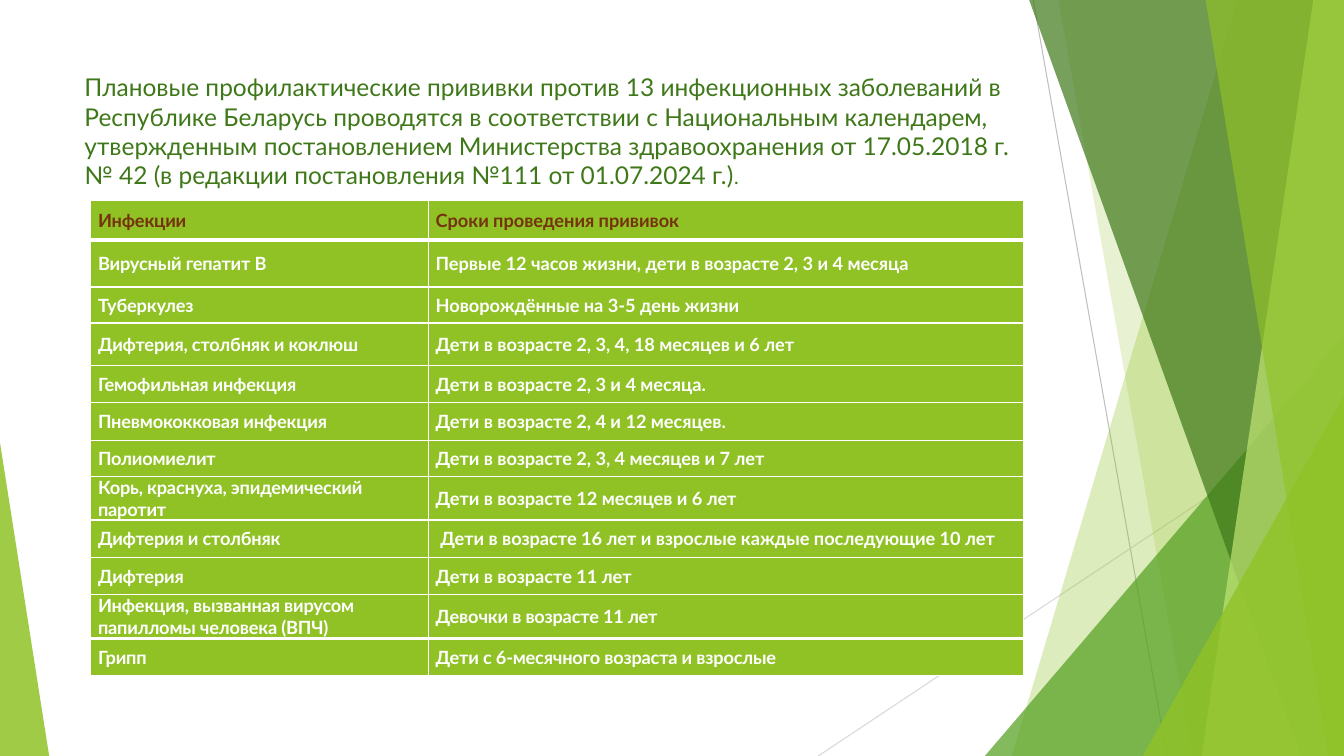
from dataclasses import dataclass

import lxml.etree
import pptx
import pptx.dml.color
import pptx.enum.shapes
import pptx.enum.text
import pptx.oxml.ns
import pptx.util

Cm = pptx.util.Cm
Pt = pptx.util.Pt
qn = pptx.oxml.ns.qn

COLORS = {
    "lime": "90C226",
    "pale": "C0E474",
    "leaf": "54A021",
    "forest": "3F7819",
    "brown": "74330C",
    "white": "FFFFFF",
    "gray": "BFBFBF",
    "light_gray": "D9D9D9",
}
FONT = "Lato"
WIDTH, HEIGHT, TOP = 33.87, 19.05, -0.02


@dataclass
class Ray:
    start: tuple[float, float]
    end: tuple[float, float]
    color: str


@dataclass
class Band:
    top_x: float
    bottom_x: float
    color: str
    opacity: int


@dataclass
class Wedge:
    left: float
    top: float
    width: float
    apex: float
    color: str
    opacity: int


@dataclass
class Vaccination:
    infection: str
    schedule: str
    height: float
    schedule_spacing: int = 0
    tab_stop: float = 0


RAYS = [
    Ray((26.04, 0), (29.41, HEIGHT), "gray"),
    Ray((WIDTH, 10.24), (20.62, HEIGHT), "light_gray"),
]
FACETS = [
    Band(31.19, 25.5, "lime", 30),
    Band(26.67, 30.05, "lime", 20),
    Wedge(24.82, 8.46, 9.05, 1, "leaf", 72),
    Band(25.93, 32.79, "forest", 70),
    Band(33.1, 30.28, "pale", 70),
    Band(30.38, 33.48, "lime", 65),
    Wedge(28.8, 9.98, 5.07, 1, "lime", 80),
    Wedge(0, 11.15, 1.24, 0, "lime", 85),
]
TITLE_LINES = [
    "Плановые профилактические прививки против 13 инфекционных заболеваний в "
    "Республике Беларусь проводятся в соответствии с Национальным календарем, "
    "утвержденным постановлением Министерства здравоохранения от 17.05.2018 г.",
    "№ 42 (в редакции постановления №111 от 01.07.2024 г.)",
]
CALENDAR = [
    Vaccination("Инфекции", "Сроки проведения прививок", 0.99),
    Vaccination("Вирусный гепатит В", "Первые 12 часов жизни, дети в возрасте 2, 3 и 4 месяца", 1.19),
    Vaccination("Туберкулез", "Новорождённые на 3-5 день жизни", 0.91),
    Vaccination("Дифтерия, столбняк и коклюш", "Дети в возрасте 2, 3, 4, 18 месяцев и 6 лет", 1.07),
    Vaccination("Гемофильная инфекция", "Дети в возрасте 2, 3 и 4 месяца.", 0.94),
    Vaccination("Пневмококковая инфекция", "Дети в возрасте 2, 4 и 12 месяцев.", 0.94),
    Vaccination("Полиомиелит", "Дети в возрасте 2, 3, 4 месяцев и 7 лет", 0.91),
    Vaccination("Корь, краснуха, эпидемический паротит", "Дети в возрасте 12 месяцев и 6 лет", 0.97),
    Vaccination("Дифтерия и столбняк", "Дети в возрасте 16 лет и взрослые каждые последующие\t10 лет", 0.94,
                tab_stop=13.94),
    Vaccination("Дифтерия", "Дети в возрасте 11 лет", 0.94),
    Vaccination("Инфекция, вызванная вирусом папилломы человека (ВПЧ)", "Девочки в возрасте 11 лет", 0.97, -10),
    Vaccination("Грипп", "Дети с 6-месячного возраста и взрослые", 0.94, -10),
]
COLUMN_WIDTHS = [8.51, 14.99]


def rgb(color: str) -> pptx.dml.color.RGBColor:
    return pptx.dml.color.RGBColor.from_string(COLORS[color])


def draw_ray(slide, ray: Ray) -> None:
    line = slide.shapes.add_connector(
        pptx.enum.shapes.MSO_CONNECTOR.STRAIGHT, *map(Cm, ray.start + ray.end))
    line.line.color.rgb = rgb(ray.color)
    line.line.width = Pt(0.75)
    lxml.etree.SubElement(line._element.spPr, qn("a:effectLst"))


def draw_facet(slide, facet: Band | Wedge) -> None:
    if isinstance(facet, Band):
        outline = slide.shapes.build_freeform(Cm(facet.top_x), Cm(TOP))
        corners = [(WIDTH, TOP), (WIDTH, HEIGHT), (facet.bottom_x, HEIGHT)]
        outline.add_line_segments([(Cm(x), Cm(y)) for x, y in corners])
        piece = outline.convert_to_shape()
    else:
        piece = slide.shapes.add_shape(
            pptx.enum.shapes.MSO_SHAPE.ISOSCELES_TRIANGLE,
            Cm(facet.left), Cm(facet.top), Cm(facet.width), Cm(HEIGHT - facet.top))
        piece.adjustments[0] = facet.apex
    piece.shadow.inherit = False
    piece.line.fill.background()
    piece.fill.solid()
    piece.fill.fore_color.rgb = rgb(facet.color)
    tint = piece._element.spPr.find(qn("a:solidFill"))[0]
    lxml.etree.SubElement(tint, qn("a:alpha"), val=str(facet.opacity * 1000))


def add_text(paragraph, text: str, size: float, color: str, bold: bool = False, spacing: int = 0) -> None:
    run = paragraph.add_run()
    run.text = text
    run.font.name = FONT
    run.font.size = Pt(size)
    run.font.bold = bold
    run.font.color.rgb = rgb(color)
    if spacing:
        run._r.get_or_add_rPr().set("spc", str(spacing))


def draw_title(slide) -> None:
    frame = slide.shapes.add_textbox(Cm(1.88), Cm(1.7), Cm(24.31), Cm(2.9)).text_frame
    frame.word_wrap = True
    paragraph = frame.paragraphs[0]
    add_text(paragraph, TITLE_LINES[0], 17.5, "forest")
    paragraph.add_line_break()
    add_text(paragraph, TITLE_LINES[1], 17.5, "forest")
    add_text(paragraph, ".", 14, "forest")


def style_cell(cell, top_border: int, bottom_border: int) -> None:
    cell.margin_left = cell.margin_right = Cm(0.18)
    cell.margin_top = cell.margin_bottom = 0
    cell.vertical_anchor = pptx.enum.text.MSO_ANCHOR.MIDDLE
    properties = cell._tc.get_or_add_tcPr()
    for side, width in (("L", 1), ("R", 1), ("T", top_border), ("B", bottom_border)):
        border = lxml.etree.SubElement(properties, qn(f"a:ln{side}"), w=str(Pt(width)))
        fill = lxml.etree.SubElement(border, qn("a:solidFill"))
        lxml.etree.SubElement(fill, qn("a:srgbClr"), val=COLORS["white"])
    cell.fill.solid()
    cell.fill.fore_color.rgb = rgb("lime")


def set_tab_stop(paragraph, position: float) -> None:
    properties = paragraph._p.get_or_add_pPr()
    properties.set("marL", "0")
    properties.set("indent", str(Cm(0.12)))
    stops = lxml.etree.SubElement(properties, qn("a:tabLst"))
    lxml.etree.SubElement(stops, qn("a:tab"), pos=str(Cm(position)), algn="l")


def draw_calendar(slide) -> None:
    last = len(CALENDAR) - 1
    table = slide.shapes.add_table(
        len(CALENDAR), len(COLUMN_WIDTHS), Cm(2.29), Cm(5.05), Cm(sum(COLUMN_WIDTHS)),
        Cm(sum(entry.height for entry in CALENDAR))).table
    table.first_row = table.horz_banding = False
    for column, width in zip(table.columns, COLUMN_WIDTHS):
        column.width = Cm(width)
    for index, entry in enumerate(CALENDAR):
        table.rows[index].height = Cm(entry.height)
        color = "white" if index else "brown"
        texts = [(entry.infection, -10), (entry.schedule, entry.schedule_spacing)]
        for column, (text, spacing) in enumerate(texts):
            cell = table.cell(index, column)
            style_cell(cell, 3 if index in (1, last) else 1, 3 if index in (0, last - 1) else 1)
            add_text(cell.text_frame.paragraphs[0], text, 13, color, True, spacing)
        if entry.tab_stop:
            set_tab_stop(table.cell(index, 1).text_frame.paragraphs[0], entry.tab_stop)


def main() -> None:
    presentation = pptx.Presentation()
    presentation.slide_width = Cm(WIDTH)
    presentation.slide_height = Cm(HEIGHT)
    slide = presentation.slides.add_slide(presentation.slide_layouts[6])
    for ray in RAYS:
        draw_ray(slide, ray)
    for facet in FACETS:
        draw_facet(slide, facet)
    draw_title(slide)
    draw_calendar(slide)
    presentation.save("out.pptx")


if __name__ == "__main__":
    main()
